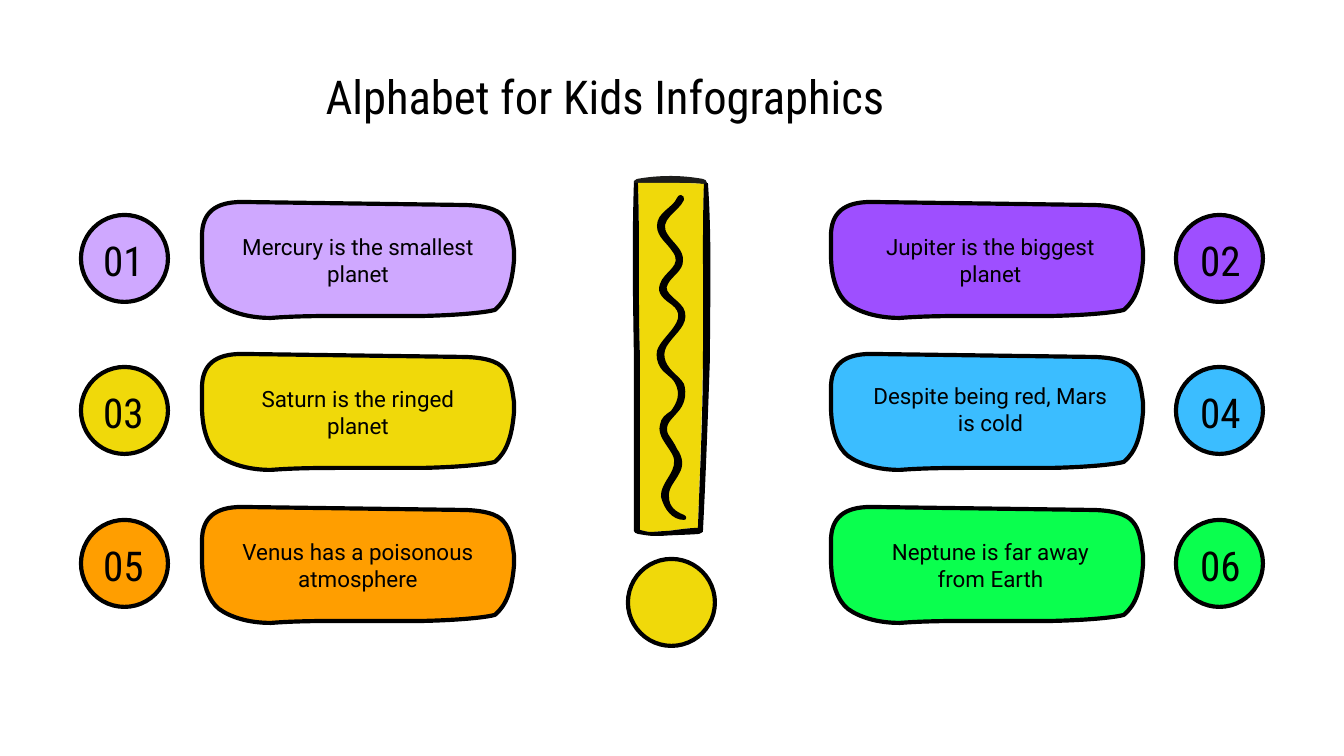
from pptx import Presentation
from pptx.dml.color import RGBColor as Rgb
from pptx.enum.shapes import MSO_SHAPE as Preset
from pptx.enum.text import MSO_ANCHOR as Anchor, PP_ALIGN as Align
from pptx.oxml.ns import qn
from pptx.oxml.xmlchemy import OxmlElement
from pptx.util import Pt

SCALE = 914400 / 134.4
COLORS = {
    "ink": "000000", "cap": "1D1D1B", "lilac": "CFA8FF", "violet": "9E4FFF",
    "yellow": "F0D90A", "sky": "3BBDFF", "orange": "FF9E00", "green": "0AFF4E",
}
TITLE_FONT = {"name": "Roboto Condensed", "size": Pt(25)}
NUMBER_FONT = {"name": "Roboto Condensed", "size": Pt(22)}
FACT_FONT = {"name": "Roboto", "size": Pt(12)}
FACTS = [
    ("01", "Mercury is the smallest planet", "lilac", Anchor.MIDDLE),
    ("02", "Jupiter is the biggest planet", "violet", Anchor.MIDDLE),
    ("03", "Saturn is the ringed planet", "yellow", Anchor.MIDDLE),
    ("04", "Despite being red, Mars is cold", "sky", Anchor.TOP),
    ("05", "Venus has a poisonous atmosphere", "orange", Anchor.MIDDLE),
    ("06", "Neptune is far away from Earth", "green", Anchor.MIDDLE),
]
COLUMNS = [
    {"bubble": 202, "fact": 222, "circle": 81, "number": 67, "inset": 13},
    {"bubble": 831, "fact": 851, "circle": 1176, "number": 1164, "inset": 20},
]
BUBBLE = [
    (0, 52), (0, 77, 7, 94, 17, 102), (28, 110, 46, 116, 69, 116),
    (94, 114, 121, 114, 148, 114), (222, 114), (263, 113, 286, 110, 293, 108),
    (305, 98, 310, 82, 312, 59), (312, 48), (310, 32, 308, 22, 302, 15),
    (296, 7, 281, 3, 258, 3), (40, 0), (13, 0, 0, 11, 0, 34),
]
CAP = [
    (671, 176), (659, 176, 648, 177, 637, 179), (634, 181), (634, 183),
    (638, 183), (648, 183, 657, 183, 668, 183), (680, 183, 691, 183, 703, 184),
    (707, 184), (707, 183), (707, 181, 705, 179, 703, 179),
    (692, 177, 681, 176, 671, 176),
]
BODY = [
    (661, 183), (638, 183), (640, 241, 638, 298, 640, 356), (640, 530),
    (644, 531, 648, 532, 650, 532), (657, 532, 663, 531, 668, 531),
    (677, 530, 687, 528, 698, 528), (700, 472, 702, 414, 703, 358),
    (704, 300, 702, 242, 704, 184), (703, 184), (689, 183, 676, 183, 661, 183),
]
FRAME = [
    (634, 183), (632, 241, 633, 298, 634, 356), (634, 531),
    (634, 532, 636, 534, 638, 534), (644, 535, 649, 536, 655, 536),
    (661, 536), (673, 535, 687, 535, 699, 534), (703, 532),
    (706, 473, 708, 415, 710, 358), (710, 300, 712, 241, 708, 183), (704, 184),
    (702, 242, 704, 300, 703, 358), (703, 414, 700, 472, 698, 528),
    (688, 528, 677, 530, 668, 531), (663, 531, 656, 532, 650, 532),
    (648, 532, 644, 531, 640, 530), (640, 356), (638, 298, 640, 241, 638, 183),
]
SQUIGGLE = [
    (681, 195), (680, 195, 677, 196, 677, 198), (673, 208, 657, 212, 657, 226),
    (657, 237, 667, 243, 672, 251), (684, 266, 664, 271, 660, 284),
    (656, 294, 665, 300, 672, 305), (691, 320, 661, 336, 657, 351),
    (656, 356, 657, 362, 660, 367), (664, 374, 671, 376, 675, 383),
    (681, 394, 677, 403, 671, 411), (665, 415, 661, 418, 660, 425),
    (657, 435, 667, 445, 672, 454), (681, 470, 660, 481, 661, 497),
    (664, 509, 672, 520, 684, 520), (687, 520, 687, 516, 684, 515),
    (676, 512, 669, 507, 669, 497), (668, 488, 675, 482, 679, 474),
    (684, 466, 683, 457, 677, 449), (675, 444, 671, 439, 668, 434),
    (664, 425, 672, 419, 677, 413), (685, 405, 687, 394, 684, 384),
    (681, 379, 677, 376, 673, 372), (664, 363, 661, 353, 669, 343),
    (676, 333, 688, 325, 685, 312), (683, 301, 661, 294, 668, 284),
    (672, 276, 683, 271, 683, 261), (684, 250, 673, 243, 668, 235),
    (657, 220, 679, 212, 684, 200), (685, 198, 683, 195, 681, 195),
]


def px(length):
    """Turn px into EMU."""
    return round(length * SCALE)


def bend(outline, segments):
    """Join each run of three lines that stands for a cubic curve."""
    geometry = next(outline._element.iter(qn("a:path")))
    lines = iter(geometry.findall(qn("a:lnTo")))
    for segment in segments:
        knots = [next(lines) for _ in range(len(segment) // 2)]
        if len(knots) == 3:
            curve = OxmlElement("a:cubicBezTo")
            knots[0].addprevious(curve)
            for knot in knots:
                curve.append(knot[0])
                geometry.remove(knot)


def paint(shape, color, outlined):
    """Give a shape its fill and, if wanted, the ink outline."""
    shape.shadow.inherit = False
    shape.fill.solid()
    shape.fill.fore_color.rgb = Rgb.from_string(COLORS[color])
    if outlined:
        shape.line.color.rgb = Rgb.from_string(COLORS["ink"])
        shape.line.width = Pt(2.25)
    else:
        shape.line.fill.background()


def add_outline(slide, segments, color, left=0, top=0, outlined=False):
    """Draw a closed hand-drawn outline of lines and cubic curves."""
    points = [
        (px(left + segment[i]), px(top + segment[i + 1]))
        for segment in segments for i in range(0, len(segment), 2)
    ]
    builder = slide.shapes.build_freeform(*points[0])
    builder.add_line_segments(points[1:], close=True)
    outline = builder.convert_to_shape()
    bend(outline, segments[1:])
    paint(outline, color, outlined)


def add_circle(slide, left, top, color):
    """Draw an outlined circle."""
    circle = slide.shapes.add_shape(Preset.OVAL, px(left), px(top), px(87), px(87))
    paint(circle, color, True)


def add_label(slide, box, wording, font, anchor=Anchor.MIDDLE, inset=13):
    """Write centred text in a box."""
    frame = slide.shapes.add_textbox(*map(px, box)).text_frame
    layout = {
        "word_wrap": True, "vertical_anchor": anchor, "margin_left": px(inset),
        "margin_right": px(13), "margin_top": px(13), "margin_bottom": px(13),
    }
    for name, value in layout.items():
        setattr(frame, name, value)
    paragraph = frame.paragraphs[0]
    paragraph.alignment = Align.CENTER
    run = paragraph.add_run()
    run.text = wording
    for name, value in font.items():
        setattr(run.font, name, value)
    run.font.color.rgb = Rgb.from_string(COLORS["ink"])


def add_fact(slide, index, number, wording, color, anchor):
    """Draw one fact bubble with its numbered circle."""
    row, side = divmod(index, 2)
    column = COLUMNS[side]
    top = 202 + 305 * row // 2
    add_outline(slide, BUBBLE, color, column["bubble"], top, True)
    fact_box = (column["fact"], top + 15, 272, 86)
    add_label(slide, fact_box, wording, FACT_FONT, anchor, column["inset"])
    add_circle(slide, column["circle"], top + 13, color)
    add_label(slide, (column["number"], top + 35, 113, 46), number, NUMBER_FONT)


def add_exclamation_mark(slide):
    """Draw the exclamation mark with its squiggle and dot."""
    layers = [(CAP, "cap"), (BODY, "yellow"), (FRAME, "ink"), (SQUIGGLE, "ink")]
    for segments, color in layers:
        add_outline(slide, segments, color)
    add_circle(slide, 628, 559, "yellow")


def main():
    """Build and save the slide."""
    deck = Presentation()
    deck.slide_width, deck.slide_height = px(1344), px(756)
    slide = deck.slides.add_slide(deck.slide_layouts[6])
    add_label(slide, (0, 60, 1210, 71), "Alphabet for Kids Infographics", TITLE_FONT)
    for index, fact in enumerate(FACTS):
        add_fact(slide, index, *fact)
    add_exclamation_mark(slide)
    deck.save("out.pptx")


if __name__ == "__main__":
    main()
